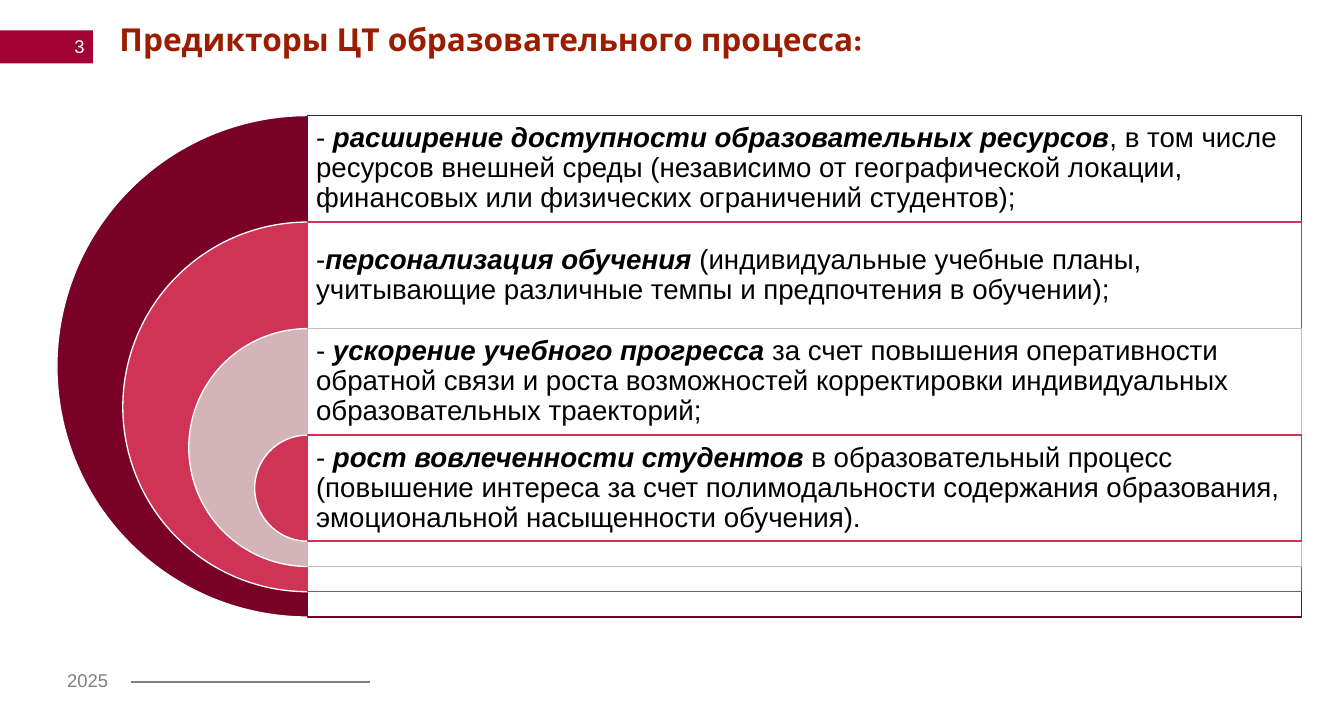
from lxml import etree
from pptx import Presentation
from pptx.dml.color import RGBColor
from pptx.enum.shapes import MSO_CONNECTOR, MSO_SHAPE
from pptx.enum.text import MSO_ANCHOR, PP_ALIGN
from pptx.oxml.ns import qn
from pptx.util import Pt

WHITE = RGBColor(0xFF, 0xFF, 0xFF)
BLACK = RGBColor(0, 0, 0)
GRAY = RGBColor(0x80, 0x80, 0x80)
CRIMSON = RGBColor(0xA3, 0x02, 0x36)
RUST = RGBColor(0x9A, 0x1D, 0x00)
MAROON = RGBColor(0x79, 0x01, 0x28)
ROSE = RGBColor(0xCF, 0x33, 0x56)
BLUSH = RGBColor(0xD3, 0xB5, 0xB9)

PREDICTORS = [
    (MAROON, "- ", "расширение доступности образовательных ресурсов",
     ", в том числе ресурсов внешней среды (независимо от географической локации, "
     "финансовых или физических ограничений студентов);"),
    (ROSE, "-", "персонализация обучения",
     " (индивидуальные учебные планы, учитывающие различные темпы и предпочтения "
     "в обучении);"),
    (BLUSH, "- ", "ускорение учебного прогресса",
     " за счет повышения оперативности обратной связи и роста возможностей "
     "корректировки индивидуальных образовательных траекторий;"),
    (ROSE, "- ", "рост вовлеченности студентов",
     " в образовательный процесс (повышение интереса за счет полимодальности "
     "содержания образования, эмоциональной насыщенности обучения)."),
]


def add_shape(s, kind, x, y, w, h, fill, line=None):
    """Add a flat preset shape with an optional one-point outline."""
    sp = s.shapes.add_shape(kind, Pt(x), Pt(y), Pt(w), Pt(h))
    sp.shadow.inherit = False
    sp.fill.solid()
    sp.fill.fore_color.rgb = fill
    if line is None:
        sp.line.fill.background()
    else:
        sp.line.color.rgb = line
        sp.line.width = Pt(1)
    return sp


def add_text(s, x, y, w, h, runs, size, color, font="Arial", inset=(7.2, 3.6),
             anchor=MSO_ANCHOR.TOP, align=PP_ALIGN.LEFT, spacing=1.0):
    """Add a one-paragraph text box from (text, bold, italic) runs."""
    tf = s.shapes.add_textbox(Pt(x), Pt(y), Pt(w), Pt(h)).text_frame
    tf.word_wrap = True
    tf.vertical_anchor = anchor
    tf.margin_left = tf.margin_right = Pt(inset[0])
    tf.margin_top = tf.margin_bottom = Pt(inset[1])
    p = tf.paragraphs[0]
    p.alignment = align
    p.line_spacing = spacing
    for text, bold, italic in runs:
        r = p.add_run()
        r.text = text
        r.font.name = font
        r.font.size = Pt(size)
        r.font.bold = bold
        r.font.italic = italic
        r.font.color.rgb = color


def add_header(s, x, y, w):
    """Place the page number tab and the title."""
    add_shape(s, MSO_SHAPE.RECTANGLE, x, y + 4.3, 70.6, 25.2, CRIMSON)
    add_text(s, x - 2.9, y + 2.2, 74.2, 28.8, [("3", False, False)], 14, WHITE,
             anchor=MSO_ANCHOR.MIDDLE, align=PP_ALIGN.RIGHT)
    title = "Предикторы ЦТ образовательного процесса:"
    add_text(s, x + 90.7, y, w - 90.7, 69.1, [(title, True, False)], 24, RUST,
             font="Karla", inset=(0, 0), spacing=0.9)


def add_footer(s, x, y):
    """Place the year and the rule beside it."""
    add_text(s, x, y, 48.2, 24.5, [("2025", False, False)], 14, GRAY)
    rule = s.shapes.add_connector(MSO_CONNECTOR.STRAIGHT, Pt(x + 55.4), Pt(y + 13),
                                  Pt(x + 236.9), Pt(y + 13))
    rule.line.color.rgb = GRAY
    rule.line.width = Pt(1.5)
    etree.SubElement(rule._element.spPr, qn("a:effectLst"))


def add_targets(s, x, y, w, h):
    """Stack nested half circles, each with its panel and statement."""
    row, shrink = 80.9, 100.1
    mid = x + h / 2
    panel_w = x + w - mid
    for i, (color, dash, term, rest) in enumerate(PREDICTORS):
        size, top = h - i * shrink, y + i * row
        pie = add_shape(s, MSO_SHAPE.PIE, mid - size / 2, top, size, size, color, WHITE)
        pie.adjustments[0], pie.adjustments[1] = 54, 162
        panel = add_shape(s, MSO_SHAPE.RECTANGLE, mid, top, panel_w, size, WHITE, color)
        srgb = panel._element.spPr.find(qn("a:solidFill")).find(qn("a:srgbClr"))
        etree.SubElement(srgb, qn("a:alpha")).set("val", "90000")
        runs = [(dash, False, False), (term, True, True), (rest, False, False)]
        add_text(s, mid, top, panel_w, row, runs, 21, BLACK, inset=(6.3, 6.3),
                 anchor=MSO_ANCHOR.MIDDLE, spacing=0.9)


def main():
    """Build the slide and save it."""
    prs = Presentation()
    prs.slide_width, prs.slide_height = Pt(1020.24), Pt(538.56)
    s = prs.slides.add_slide(prs.slide_layouts[6])
    add_footer(s, 43.9, 504.7)
    add_header(s, 0, 18.7, 900.7)
    add_targets(s, 43.2, 87.8, 944.7, 380.9)
    prs.save("out.pptx")


if __name__ == "__main__":
    main()
